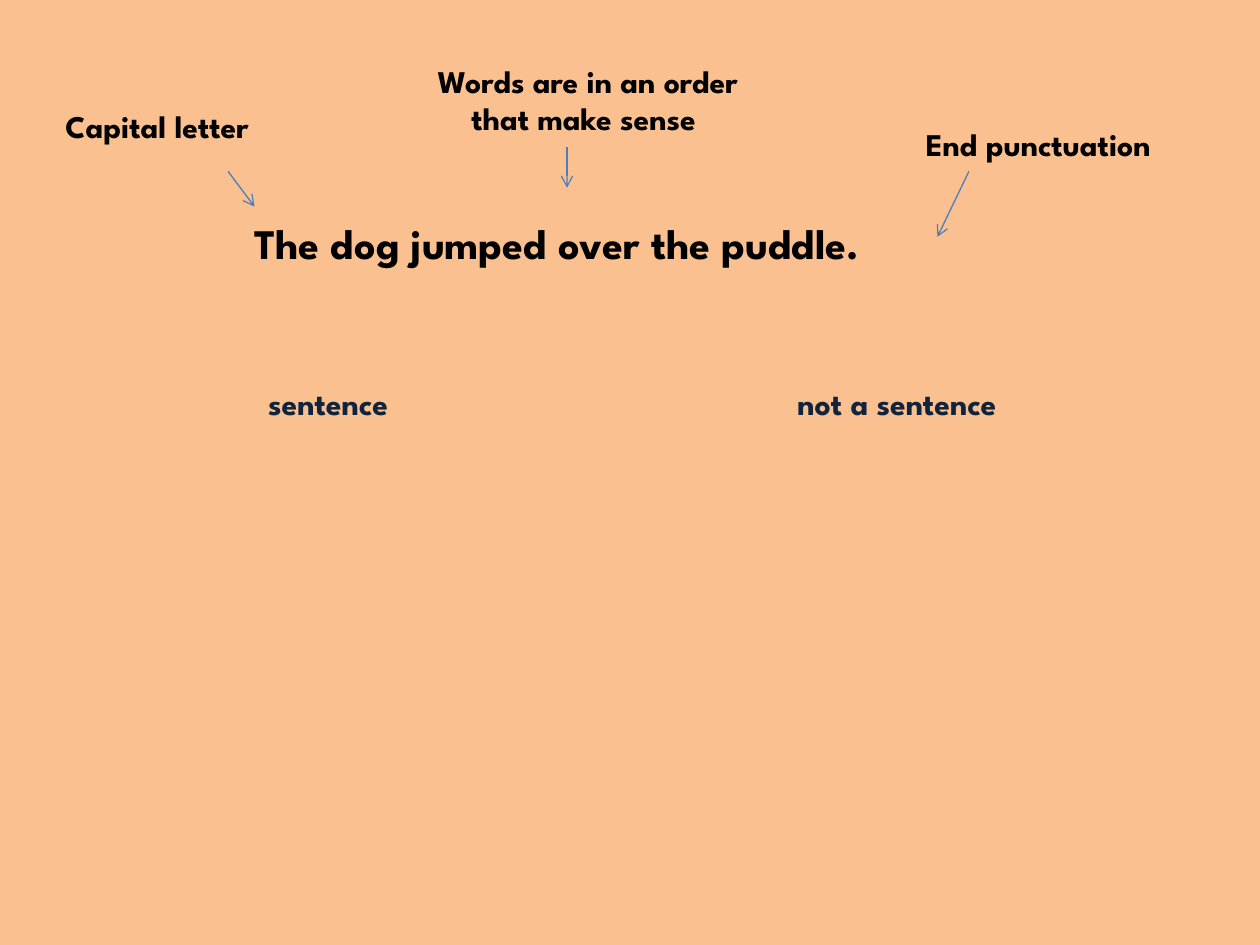
from dataclasses import dataclass

from lxml import etree
from pptx import Presentation
from pptx.dml.color import RGBColor
from pptx.enum import shapes, text
from pptx.oxml import ns
from pptx.util import Inches, Pt


@dataclass(frozen=True)
class Theme:
    font: str = "League Spartan"
    background: RGBColor = RGBColor(0xFA, 0xC0, 0x90)
    ink: RGBColor = RGBColor(0, 0, 0)
    heading: RGBColor = RGBColor(0x0F, 0x24, 0x3E)
    arrow: RGBColor = RGBColor(0x4B, 0x7E, 0xBC)
    example_size: Pt = Pt(24)
    label_size: Pt = Pt(18)
    arrow_width: Pt = Pt(0.75)


THEME = Theme()


def add_label(s, words, box, color=THEME.ink, size=THEME.label_size,
              align=text.PP_ALIGN.LEFT):
    """Add bold wrapped text in a (left, top, width, height) box."""
    tf = s.shapes.add_textbox(*map(Inches, box)).text_frame
    tf.word_wrap = True
    tf.auto_size = text.MSO_AUTO_SIZE.SHAPE_TO_FIT_TEXT
    p = tf.paragraphs[0]
    p.text = words
    p.alignment = align
    p.font.name = THEME.font
    p.font.size = size
    p.font.bold = True
    p.font.color.rgb = color


def add_arrow(s, start, end):
    """Add a thin arrow with an open head at its end point."""
    line = s.shapes.add_connector(shapes.MSO_CONNECTOR.STRAIGHT,
                                  *map(Inches, start + end))
    line.line.color.rgb = THEME.arrow
    line.line.width = THEME.arrow_width
    etree.SubElement(line.line._get_or_add_ln(), ns.qn("a:tailEnd"), type="arrow")
    etree.SubElement(line._element.spPr, ns.qn("a:effectLst"))


def main():
    prs = Presentation()
    prs.slide_width, prs.slide_height = Inches(10), Inches(7.5)
    s = prs.slides.add_slide(prs.slide_layouts[6])
    s.background.fill.solid()
    s.background.fill.fore_color.rgb = THEME.background

    # Example sentence
    add_label(s, "The dog jumped over the puddle.", (1.92, 1.68, 6, 0.5),
              size=THEME.example_size)

    # Sorting headings
    for words, left, width in (("sentence", 2.03, 1.58),
                               ("not a sentence", 6.23, 2.92)):
        add_label(s, words, (left, 3, width, 0.4), THEME.heading)

    # Features of a sentence, each with an arrow to the example
    left, center = text.PP_ALIGN.LEFT, text.PP_ALIGN.CENTER
    features = (
        ("Capital letter", (0.42, 0.8, 2, 0.4), left, (1.81, 1.36), (2.02, 1.64)),
        ("Words are in an order that make sense ", (3.25, 0.44, 2.83, 0.71), center,
         (4.5, 1.17), (4.5, 1.49)),
        ("End punctuation", (7.25, 0.94, 2.42, 0.4), left, (7.69, 1.36), (7.44, 1.88)),
    )
    for words, box, align, start, end in features:
        add_label(s, words, box, align=align)
        add_arrow(s, start, end)

    prs.save("out.pptx")


if __name__ == "__main__":
    main()
